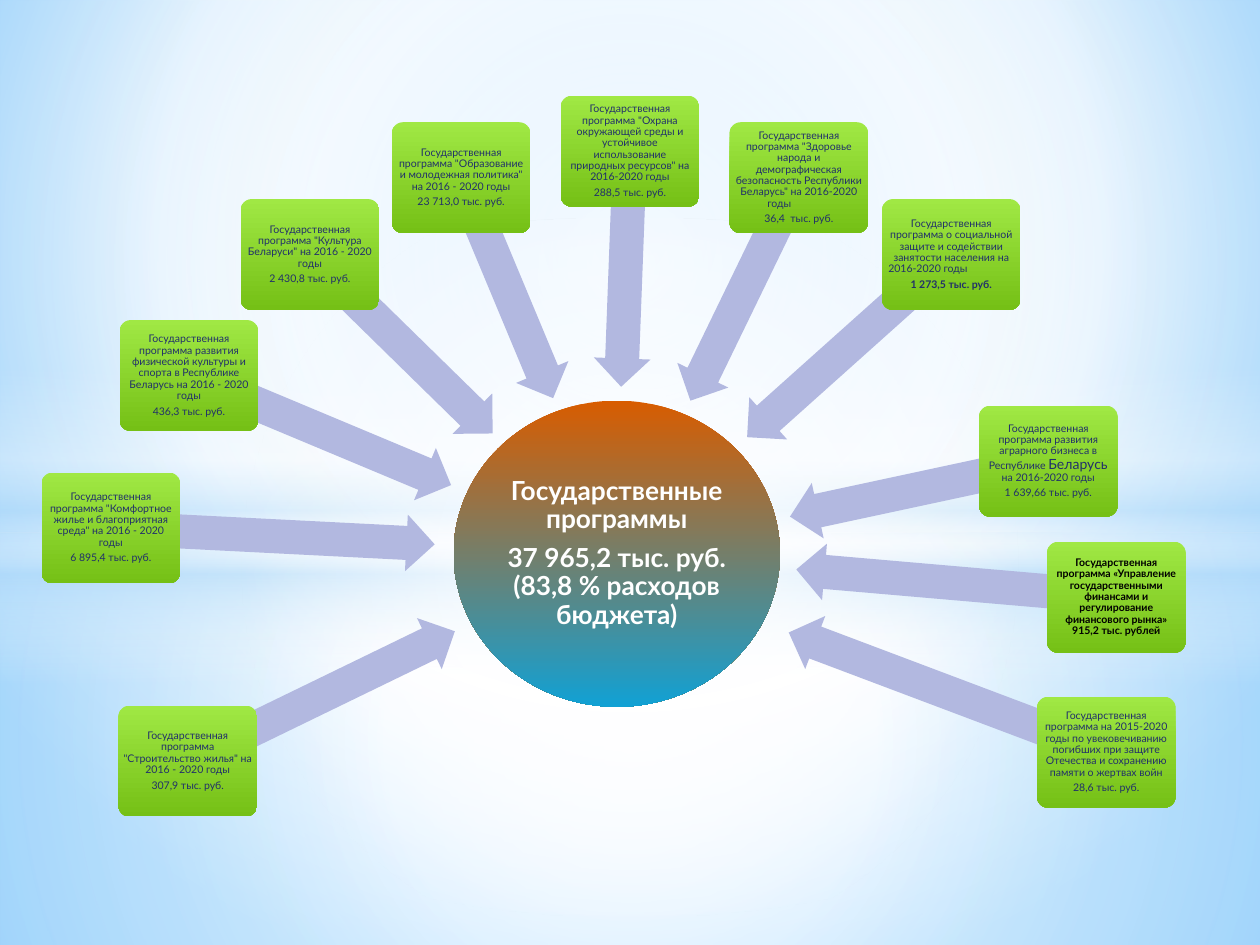
import dataclasses
import math

import pptx
import pptx.dml.color
import pptx.enum.shapes
import pptx.enum.text
import pptx.oxml
import pptx.oxml.ns
import pptx.util

COLUMNS, ROWS = 100, 75
CELL = pptx.util.Inches(0.1)
FONT = "Lato"
COLORS = {
    "white": "FFFFFF", "pale": "B4DCFA", "sky": "9ED5FF", "edge": "5BB9FF",
    "hub_top": "D85C00", "hub_bottom": "11A1D4", "arrow": "B2B8E0",
    "card_top": "A0E844", "card_bottom": "75C016", "text": "21306A", "strong": "000000",
}
CARD_SIZE = (11, 8.8)
ARROW_THICKNESS = 4.5
CENTRE = (50, 50, 50, 50)
SHAPES = pptx.enum.shapes.MSO_SHAPE


@dataclasses.dataclass
class Programme:
    """Card position and arrow tip in grid cells, with the card's wording."""
    corner: tuple
    tip: tuple
    title: str
    amount: str = ""
    enlarged: str = ""
    bold_amount: bool = False
    strong: bool = False


PROGRAMMES = [
    Programme((9.4, 56), (36.1, 50.1),
              'Государственная программа "Строительство жилья" на 2016 - 2020 годы', "307,9 тыс. руб."),
    Programme((3.3, 37.5), (34.5, 43.2),
              'Государственная программа "Комфортное жилье и благоприятная среда" на 2016 - 2020 годы',
              "6 895,4 тыс. руб."),
    Programme((9.5, 25.4), (35.8, 38.5),
              "Государственная программа развития физической культуры и спорта "
              "в Республике Беларусь на 2016 - 2020 годы", "436,3 тыс. руб."),
    Programme((19.1, 15.8), (39.1, 34.4),
              'Государственная программа "Культура Беларуси" на 2016 - 2020 годы', "2 430,8 тыс. руб."),
    Programme((31.1, 9.7), (43.9, 31.6),
              'Государственная программа "Образование и молодежная политика" на 2016 - 2020 годы',
              "23 713,0 тыс. руб."),
    Programme((44.5, 7.6), (49.3, 30.7),
              'Государственная программа "Охрана окружающей среды и устойчивое использование '
              'природных ресурсов" на 2016-2020 годы', "288,5 тыс. руб."),
    Programme((57.9, 9.7), (54.8, 31.8),
              'Государственная программа "Здоровье народа и демографическая безопасность '
              'Республики Беларусь" на 2016-2020 годы\t', "36,4  тыс. руб."),
    Programme((70, 15.8), (59.3, 34.7),
              "Государственная программа о социальной защите и содействии занятости населения "
              "на 2016-2020 годы\t", "1 273,5 тыс. руб.", bold_amount=True),
    Programme((77.7, 32.2), (62.7, 41),
              "Государственная программа развития аграрного бизнеса в Республике Беларусь "
              "на 2016-2020 годы", "1 639,66 тыс. руб.", enlarged="Беларусь"),
    Programme((83.1, 43), (63.2, 45.2),
              "Государственная программа «Управление государственными финансами "
              "и регулирование финансового рынка» 915,2 тыс. рублей", strong=True),
    Programme((82.3, 55.3), (62.6, 50.2),
              "Государственная программа на 2015-2020 годы по увековечиванию погибших при защите "
              "Отечества и сохранению памяти о жертвах войн", "28,6 тыс. руб."),
]


def color(name):
    return pptx.dml.color.RGBColor.from_string(COLORS[name])


def set_gradient(fill, properties, stops, focus=None):
    """Fill with (position, colour, opacity) stops: top to bottom, or circular around focus."""
    fill.gradient()
    gradient = properties.find(pptx.oxml.ns.qn("a:gradFill"))
    for child in list(gradient):
        gradient.remove(child)
    stop_xml = "".join(
        f'<a:gs pos="{position * 1000}"><a:srgbClr val="{COLORS[name]}">'
        f'<a:alpha val="{opacity * 1000}"/></a:srgbClr></a:gs>'
        for position, name, opacity in stops)
    direction = '<a:lin ang="5400000" scaled="0"/>'
    if focus:
        sides = " ".join(f'{side}="{share * 1000}"' for side, share in zip("ltrb", focus))
        direction = f'<a:path path="circle"><a:fillToRect {sides}/></a:path>'
    namespace = pptx.oxml.ns.nsdecls("a")
    source = pptx.oxml.parse_xml(
        f"<a:gradFill {namespace}><a:gsLst>{stop_xml}</a:gsLst>{direction}</a:gradFill>")
    gradient.extend(list(source))


def add_shape(slide, kind, box):
    """Add a shape without line or shadow; box is in grid cells."""
    shape = slide.shapes.add_shape(kind, *(round(length * CELL) for length in box))
    shape.shadow.inherit = False
    shape.line.fill.background()
    return shape


def add_gradient_shape(slide, kind, box, stops, focus=None):
    shape = add_shape(slide, kind, box)
    set_gradient(shape.fill, shape._element.spPr, stops, focus)
    return shape


def prepare_text(shape):
    frame = shape.text_frame
    frame.word_wrap = True
    frame.vertical_anchor = pptx.enum.text.MSO_ANCHOR.MIDDLE
    frame.margin_left = frame.margin_top = pptx.util.Inches(0.01)
    frame.margin_right = frame.margin_bottom = pptx.util.Inches(0.01)
    return frame


def style_paragraph(paragraph, size, color_name, bold=False):
    paragraph.alignment = pptx.enum.text.PP_ALIGN.CENTER
    paragraph.line_spacing = 0.9
    paragraph.space_after = pptx.util.Pt(0.4 * size)
    paragraph.font.name = FONT
    paragraph.font.size = pptx.util.Pt(size)
    paragraph.font.bold = bold
    paragraph.font.color.rgb = color(color_name)


def write_paragraphs(shape, texts, size, color_name, bolds):
    frame = prepare_text(shape)
    frame.text = "\n".join(texts)
    for paragraph, bold in zip(frame.paragraphs, bolds):
        style_paragraph(paragraph, size, color_name, bold)
    return frame


def add_backdrop(slide, box):
    left, top, width, height = box
    background = slide.background.fill
    background.gradient()
    set_gradient(background, slide._element.cSld.bg.bgPr,
                 [(0, "sky", 100), (60, "white", 100), (100, "edge", 100)], (20, 10, 20, 60))
    horizon = 0.564 * height
    add_gradient_shape(slide, SHAPES.RECTANGLE, (left, top + horizon, width, height - horizon),
                       [(0, "white", 91), (37, "white", 76), (100, "pale", 79)], CENTRE)
    add_gradient_shape(slide, SHAPES.RECTANGLE, (left, top, width, horizon),
                       [(0, "white", 89), (48, "white", 62), (100, "pale", 79)], CENTRE)
    add_gradient_shape(slide, SHAPES.RECTANGLE, (left, top + 0.39 * height, width, height / 3),
                       [(0, "white", 0), (29, "white", 30), (45, "pale", 40),
                        (55, "white", 26), (65, "pale", 60), (100, "white", 0)])
    add_gradient_shape(slide, SHAPES.OVAL, (left, top + 0.23 * height, width, 0.74 * height),
                       [(0, "white", 100), (54, "white", 0)], CENTRE)


def add_hub(slide, box):
    hub = add_gradient_shape(slide, SHAPES.OVAL, box,
                             [(0, "hub_top", 100), (100, "hub_bottom", 100)])
    write_paragraphs(hub, ["Государственные программы",
                           "37 965,2 тыс. руб. (83,8 % расходов бюджета)"],
                     15, "white", (True, True))


def add_arrow(slide, tail, tip):
    """Draw a block arrow between two points by rotating a left arrow about its middle."""
    run, rise = tail[0] - tip[0], tail[1] - tip[1]
    length = math.hypot(run, rise)
    middle_x, middle_y = (tail[0] + tip[0]) / 2, (tail[1] + tip[1]) / 2
    arrow = add_shape(slide, SHAPES.LEFT_ARROW,
                      (middle_x - length / 2, middle_y - ARROW_THICKNESS / 2,
                       length, ARROW_THICKNESS))
    arrow.adjustments[0], arrow.adjustments[1] = 0.6, 0.5
    arrow.rotation = math.degrees(math.atan2(rise, run))
    arrow.fill.solid()
    arrow.fill.fore_color.rgb = color("arrow")


def add_card(slide, box, programme):
    card = add_gradient_shape(slide, SHAPES.ROUNDED_RECTANGLE, box,
                              [(0, "card_top", 100), (100, "card_bottom", 100)])
    card.adjustments[0] = 0.1
    texts = [text for text in (programme.title, programme.amount) if text]
    frame = write_paragraphs(card, texts, 6, "strong" if programme.strong else "text",
                             (programme.strong, programme.bold_amount))
    if programme.enlarged:
        title = frame.paragraphs[0]
        before, word, after = programme.title.partition(programme.enlarged)
        title.runs[0].text = before
        for part in (word, after):
            title.add_run().text = part
        title.runs[1].font.size = pptx.util.Pt(8)


def add_programmes(slide, box):
    left, top = box[:2]
    width, height = CARD_SIZE
    for programme in PROGRAMMES:
        x, y = left + programme.corner[0], top + programme.corner[1]
        tip = (left + programme.tip[0], top + programme.tip[1])
        add_arrow(slide, (x + width / 2, y + height / 2), tip)
        add_card(slide, (x, y, width, height), programme)


def main():
    presentation = pptx.Presentation()
    presentation.slide_width, presentation.slide_height = COLUMNS * CELL, ROWS * CELL
    slide = presentation.slides.add_slide(presentation.slide_layouts[6])
    page = (0, 0, COLUMNS, ROWS)
    add_backdrop(slide, page)
    add_hub(slide, (36, 31.8, 25.9, 24.3))
    add_programmes(slide, page)
    presentation.save("out.pptx")


if __name__ == "__main__":
    main()
